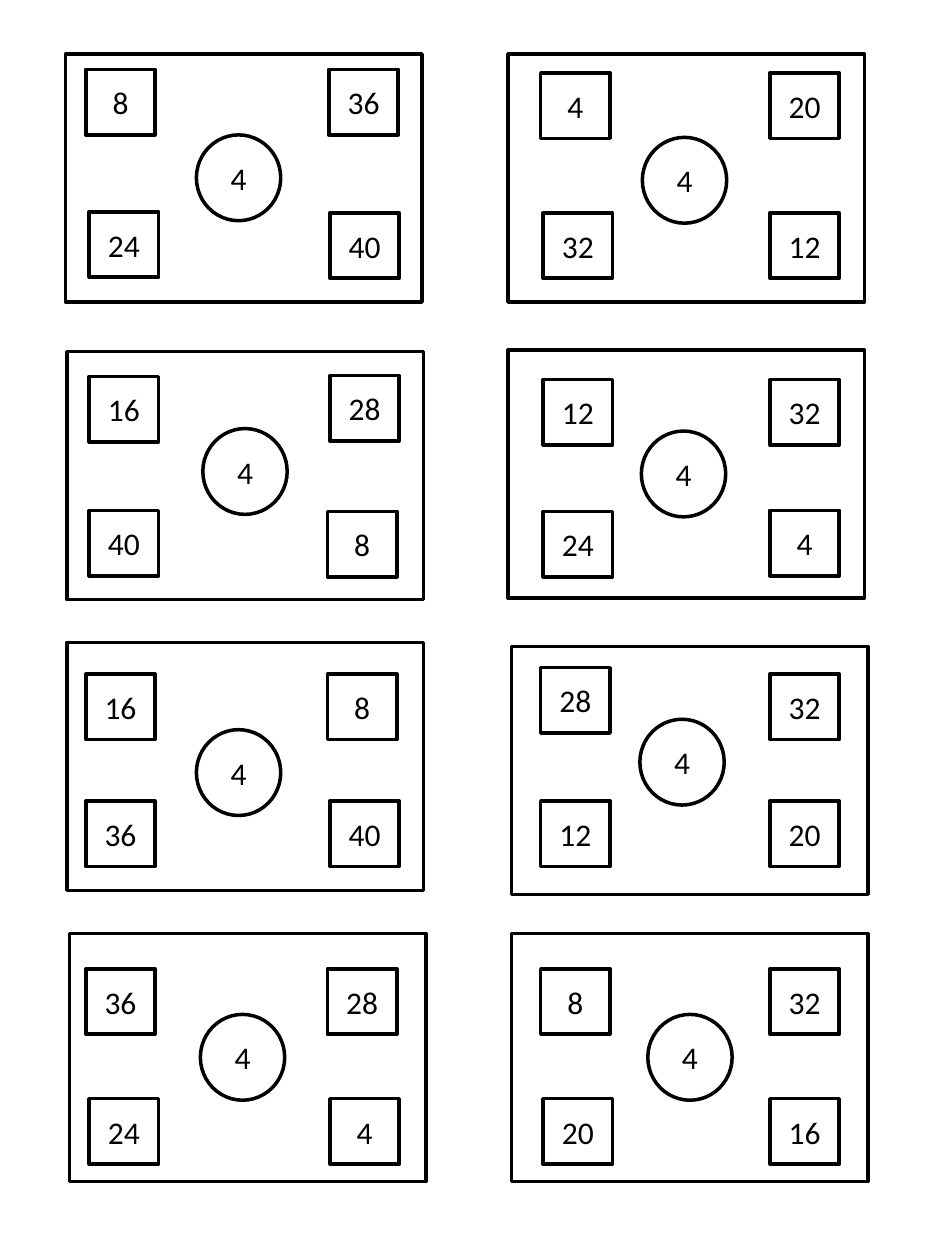
from pptx import Presentation
from pptx import util as u
from pptx.dml.color import RGBColor
from pptx.enum import shapes, text

BLACK = RGBColor(0, 0, 0)
WHITE = RGBColor(255, 255, 255)

# Sizes in centimetres
CARD_SIZE = (7.19, 5.0)
BOX_SIZE = (1.4, 1.32)
CIRCLE_SIZE = (1.7, 1.73)
FACTOR = 4

# Each card: its corner, its circle's corner, and its number boxes
# (top left, top right, bottom left, bottom right) as left, top, number
CARDS = [
    ((1.32, 1.09), (3.96, 2.72),
     [(1.73, 1.4, 8), (6.63, 1.4, 36), (1.8, 4.27, 24), (6.65, 4.29, 40)]),
    ((10.24, 1.09), (12.95, 2.77),
     [(10.9, 1.47, 4), (15.52, 1.47, 20), (10.95, 4.29, 32), (15.52, 4.29, 12)]),
    ((1.35, 7.09), (4.09, 8.64),
     [(1.8, 7.59, 16), (6.65, 7.57, 28), (1.8, 10.29, 40), (6.6, 10.31, 8)]),
    ((10.24, 7.06), (12.93, 8.69),
     [(10.95, 7.65, 12), (15.52, 7.65, 32), (10.95, 10.31, 24), (15.52, 10.29, 4)]),
    ((1.35, 12.95), (3.96, 14.71),
     [(1.73, 13.59, 16), (6.6, 13.59, 8), (1.73, 16.15, 36), (6.65, 16.15, 40)]),
    ((10.31, 13.03), (12.9, 14.5),
     [(10.9, 13.46, 28), (15.52, 13.59, 32), (10.9, 16.15, 12), (15.52, 16.15, 20)]),
    ((1.4, 18.82), (4.04, 20.45),
     [(1.73, 19.53, 36), (6.6, 19.53, 28), (1.8, 22.15, 24), (6.65, 22.15, 4)]),
    ((10.31, 18.82), (13.06, 20.45),
     [(10.9, 19.53, 8), (15.52, 19.53, 32), (10.95, 22.15, 20), (15.52, 22.15, 16)]),
]


class Sheet:
    """Holds the style and the current page."""

    font_format = {"name": "Calibri", "size": u.Pt(18)}
    line_width = u.Pt(2)

    def __init__(self, page):
        self.page = page

    def outline(self, kind, corner, size):
        box = self.page.shapes.add_shape(kind, *map(u.Cm, corner + size))
        box.shadow.inherit = False
        box.fill.solid()
        box.fill.fore_color.rgb = WHITE
        box.line.color.rgb = BLACK
        box.line.width = self.line_width
        return box

    def label(self, box, number):
        box.text_frame.vertical_anchor = text.MSO_ANCHOR.MIDDLE
        para = box.text_frame.paragraphs[0]
        para.alignment = text.PP_ALIGN.CENTER
        span = para.add_run()
        span.text = str(number)
        for name, value in self.font_format.items():
            setattr(span.font, name, value)
        span.font.color.rgb = BLACK

    def card(self, corner):
        self.outline(shapes.MSO_SHAPE.RECTANGLE, corner, CARD_SIZE)

    def number_box(self, corner, number):
        self.label(self.outline(shapes.MSO_SHAPE.RECTANGLE, corner, BOX_SIZE), number)

    def circle(self, corner, number):
        self.label(self.outline(shapes.MSO_SHAPE.OVAL, corner, CIRCLE_SIZE), number)


def main():
    deck = Presentation()
    deck.slide_width, deck.slide_height = u.Cm(19.05), u.Cm(25.4)
    sheet = Sheet(deck.slides.add_slide(deck.slide_layouts[6]))

    # Card frames at the back
    for corner, _, _ in CARDS:
        sheet.card(corner)

    # Multiples in the corners of each card
    for _, _, boxes in CARDS:
        for left, top, number in boxes:
            sheet.number_box((left, top), number)

    # Common factor in the middle
    for _, corner, _ in CARDS:
        sheet.circle(corner, FACTOR)

    deck.save("out.pptx")


if __name__ == "__main__":
    main()
